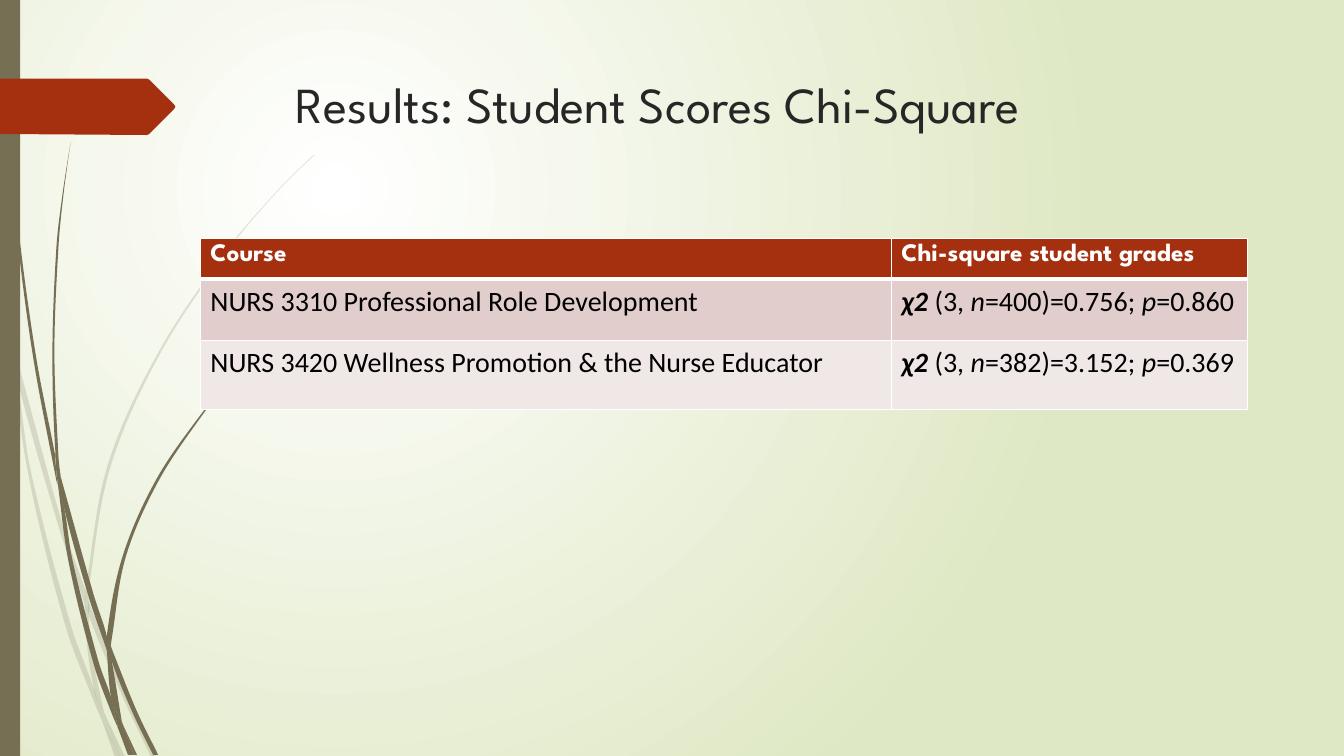
from dataclasses import dataclass

from lxml import etree
from pptx import Presentation
from pptx.dml.color import RGBColor
from pptx.enum.shapes import MSO_SHAPE
from pptx.enum.text import MSO_ANCHOR
from pptx.oxml.ns import qn
from pptx.util import Cm, Pt

RECT = MSO_SHAPE.RECTANGLE
TOP = MSO_ANCHOR.TOP
UNIT = 0.0254  # one drawing unit, in cm


@dataclass(frozen=True)
class Theme:
    white: str = "FFFFFF"
    leaf: str = "DFE8C4"
    olive: str = "766F54"
    rust: str = "A53010"
    ink: str = "262626"
    black: str = "000000"
    bands: tuple = ("E1CDCC", "F0E8E7")
    head_font: str = "League Spartan"
    body_font: str = "Calibri"
    title: int = 36
    head: int = 18
    body: int = 20


THEME = Theme()

# Each blade is a left and a right edge, as knots running down the slide.
PALE = [
    ([(0, 299), (10, 344), (11, 350)], [(0, 282), (9, 322), (11, 350)]),
    ([(14, 345), (17, 376), (58, 522), (84, 599)], [(14, 345), (62, 520), (85, 586)]),
    ([(88, 596), (88, 610), (123, 694), (150, 751)],
     [(88, 596), (92, 607), (127, 692), (155, 751)]),
    ([(105, 711), (119, 751)], [(105, 711), (124, 751)]),
    ([(11, 350), (28, 470), (65, 621), (92, 693), (101, 714)],
     [(11, 350), (17, 376), (31, 469), (70, 619), (93, 683), (99, 707), (101, 714)]),
    ([(84, 599), (87, 646), (93, 683), (96, 692), (105, 711)],
     [(84, 599), (88, 608), (88, 610), (91, 646), (103, 706), (105, 711)]),
    ([(312, 153), (289, 175), (268, 197), (228, 244), (158, 348), (107, 461),
      (85, 584), (85, 586), (88, 596)],
     [(312, 154), (290, 175), (268, 198), (229, 245), (160, 349), (110, 462),
      (88, 584), (88, 596)]),
    ([(101, 714), (114, 751)], [(101, 714), (119, 751)]),
    ([(85, 586), (84, 599), (88, 608)], [(85, 586), (88, 596), (88, 610)]),
    ([(93, 683), (99, 707), (101, 714), (119, 751)],
     [(93, 683), (96, 692), (105, 711), (119, 751)]),
]
DARK = [
    ([(3, 0), (4, 48), (7, 110), (17, 233), (33, 355), (56, 477), (57, 481)],
     [(4, 0), (5, 48), (8, 109), (19, 232), (36, 355), (55, 453), (55, 457), (57, 481)]),
    ([(60, 472), (64, 505), (88, 592), (106, 645)],
     [(60, 472), (93, 590), (106, 631), (106, 645)]),
    ([(110, 641), (111, 656), (132, 708), (152, 749)],
     [(110, 641), (113, 649), (136, 706), (157, 749)]),
    ([(57, 477), (68, 557), (93, 659), (111, 708), (117, 722)],
     [(57, 477), (64, 505), (72, 556), (98, 657), (110, 691), (116, 717), (117, 722)]),
    ([(70, 141), (62, 193), (56, 245), (52, 349), (55, 449), (60, 472)],
     [(70, 141), (63, 193), (58, 245), (54, 349), (58, 453), (60, 472)]),
    ([(122, 719), (133, 749)], [(122, 719), (136, 749)]),
    ([(55, 449), (55, 453), (57, 477), (64, 505)], [(55, 449), (60, 472), (64, 505)]),
    ([(260, 344), (245, 358), (231, 373), (204, 405), (156, 474), (122, 551),
      (106, 631), (110, 641)],
     [(261, 344), (245, 359), (231, 374), (205, 406), (158, 476), (125, 552),
      (111, 633), (110, 641)]),
    ([(117, 722), (127, 749)], [(117, 722), (131, 749)]),
    ([(106, 645), (110, 691), (116, 706), (122, 719)],
     [(106, 645), (109, 651), (111, 656), (121, 716), (122, 719)]),
    ([(106, 631), (106, 645), (111, 656)], [(106, 631), (110, 641), (111, 656)]),
    ([(110, 691), (116, 717), (117, 722), (130, 749)],
     [(110, 691), (116, 706), (122, 719), (133, 749)]),
]
TAB = [(0, 78), (146, 78), (148, 79), (173, 104), (174, 106), (173, 108), (148, 133),
       (146, 134), (0, 133)]

COURSES = [
    ("NURS 3310 Professional Role Development", "=400)=0.756; ", "=0.860"),
    ("NURS 3420 Wellness Promotion & the Nurse Educator", "=382)=3.152; ", "=0.369"),
]


def rgb(code):
    return RGBColor.from_string(code)


def write(par, text, color, **form):
    run = par.add_run()
    run.text = text
    for name, value in form.items():
        setattr(run.font, name, value)
    run.font.color.rgb = rgb(color)


def paint(shape, color):
    shape.shadow.inherit = False
    shape.fill.solid()
    shape.fill.fore_color.rgb = rgb(color)
    shape.line.fill.background()


def smooth(knots):
    """Knots with two Bézier handles between each pair, for a curve x(y)."""
    last = len(knots) - 1
    tilts = []
    for i in range(last + 1):
        (xa, ya), (xb, yb) = knots[max(i - 1, 0)], knots[min(i + 1, last)]
        tilts.append((xb - xa) / (yb - ya))
    points = [knots[0]]
    for i in range(last):
        (xa, ya), (xb, yb) = knots[i], knots[i + 1]
        third = (yb - ya) / 3
        points += [(xa + third * tilts[i], ya + third),
                   (xb - third * tilts[i + 1], yb - third), (xb, yb)]
    return points


def outline(slide, left, top, points):
    ring = [(left + Cm(x * UNIT), top + Cm(y * UNIT)) for x, y in points]
    pen = slide.shapes.build_freeform(*ring[0])
    pen.add_line_segments(ring[1:], close=True)
    return pen.convert_to_shape()


def curve(shape):
    """Turn each three line segments into one Bézier segment."""
    lines = list(shape._element.iter(qn("a:lnTo")))
    for first, *rest in zip(lines[::3], lines[1::3], lines[2::3]):
        first.tag = qn("a:cubicBezTo")
        for line in rest:
            first.append(line[0])
            line.getparent().remove(line)


def backdrop(slide):
    fill = slide.background.fill
    fill.gradient()
    for stop, color, place in zip(fill.gradient_stops, (THEME.white, THEME.leaf), (0, 1)):
        stop.color.rgb = rgb(color)
        stop.position = place
    grad = slide.element.find(".//" + qn("a:gradFill"))
    grad.remove(grad.find(qn("a:lin")))
    way = etree.SubElement(grad, qn("a:path"), path="circle")
    etree.SubElement(way, qn("a:fillToRect"), l="50000", t="50000", r="100000", b="100000")


def grass(slide, left, top, blades, alpha=None):
    for near, far in blades:
        foot = [near[-1], far[-1]]
        points = smooth(near) + foot + smooth(far)[::-1]
        blade = outline(slide, left, top, points)
        curve(blade)
        paint(blade, THEME.olive)
        if alpha:
            tint = blade._element.spPr.find(".//" + qn("a:srgbClr"))
            etree.SubElement(tint, qn("a:alpha"), val=str(alpha * 1000))


def margin(slide, left, top, height):
    """Grass, side bar and arrow tab along the slide's left edge."""
    grass(slide, left, top, PALE, alpha=20)
    grass(slide, left, top, DARK)
    bar = slide.shapes.add_shape(RECT, left, top, Cm(0.51), height)
    paint(bar, THEME.olive)
    paint(outline(slide, left, top, TAB), THEME.rust)


def heading(slide, left, top, width, height):
    frame = slide.shapes.add_textbox(left, top, width, height).text_frame
    frame.word_wrap = True
    frame.vertical_anchor = TOP
    write(frame.paragraphs[0], "Results: Student Scores Chi-Square", THEME.ink,
          name=THEME.head_font, size=Pt(THEME.title))


def dress(cell, color, base):
    """Borders first, since the fill must follow them in the XML."""
    props = cell._tc.get_or_add_tcPr()
    for side, width in zip("LRTB", (1, 1, 1, base)):
        line = etree.SubElement(props, qn("a:ln" + side), w=str(Pt(width)))
        solid = etree.SubElement(line, qn("a:solidFill"))
        etree.SubElement(solid, qn("a:srgbClr"), val=THEME.white)
    cell.fill.solid()
    cell.fill.fore_color.rgb = rgb(color)


def scores(slide, left, top, width, height):
    grid = slide.shapes.add_table(3, 2, left, top, width, height).table
    grid.columns[0].width = Cm(17.41)
    grid.columns[1].width = width - Cm(17.41)
    for row, tall in zip(grid.rows, (1.01, 1.55, 1.73)):
        row.height = Cm(tall)
    for col, label in enumerate(("Course", "Chi-square student grades")):
        cell = grid.cell(0, col)
        dress(cell, THEME.rust, 3)
        write(cell.text_frame.paragraphs[0], label, THEME.white,
              name=THEME.head_font, size=Pt(THEME.head), bold=True)
    for row, (course, count, chance) in enumerate(COURSES, 1):
        parts = [("χ2 ", True, True), ("(3, ", False, False), ("n", False, True),
                 (count, False, False), ("p", False, True), (chance, False, False)]
        for col, runs in enumerate(([(course, False, False)], parts)):
            cell = grid.cell(row, col)
            dress(cell, THEME.bands[row - 1], 1)
            for text, bold, italic in runs:
                write(cell.text_frame.paragraphs[0], text, THEME.black,
                      name=THEME.body_font, size=Pt(THEME.body),
                      bold=bold, italic=italic)


def main():
    deck = Presentation()
    deck.slide_width, deck.slide_height = Cm(33.87), Cm(19.05)
    slide = deck.slides.add_slide(deck.slide_layouts[6])
    backdrop(slide)
    margin(slide, Cm(0), Cm(0), deck.slide_height)
    heading(slide, Cm(7.21), Cm(1.73), Cm(24.77), Cm(3.56))
    scores(slide, Cm(5.05), Cm(6.02), Cm(26.39), Cm(4.3))
    deck.save("out.pptx")


if __name__ == "__main__":
    main()
